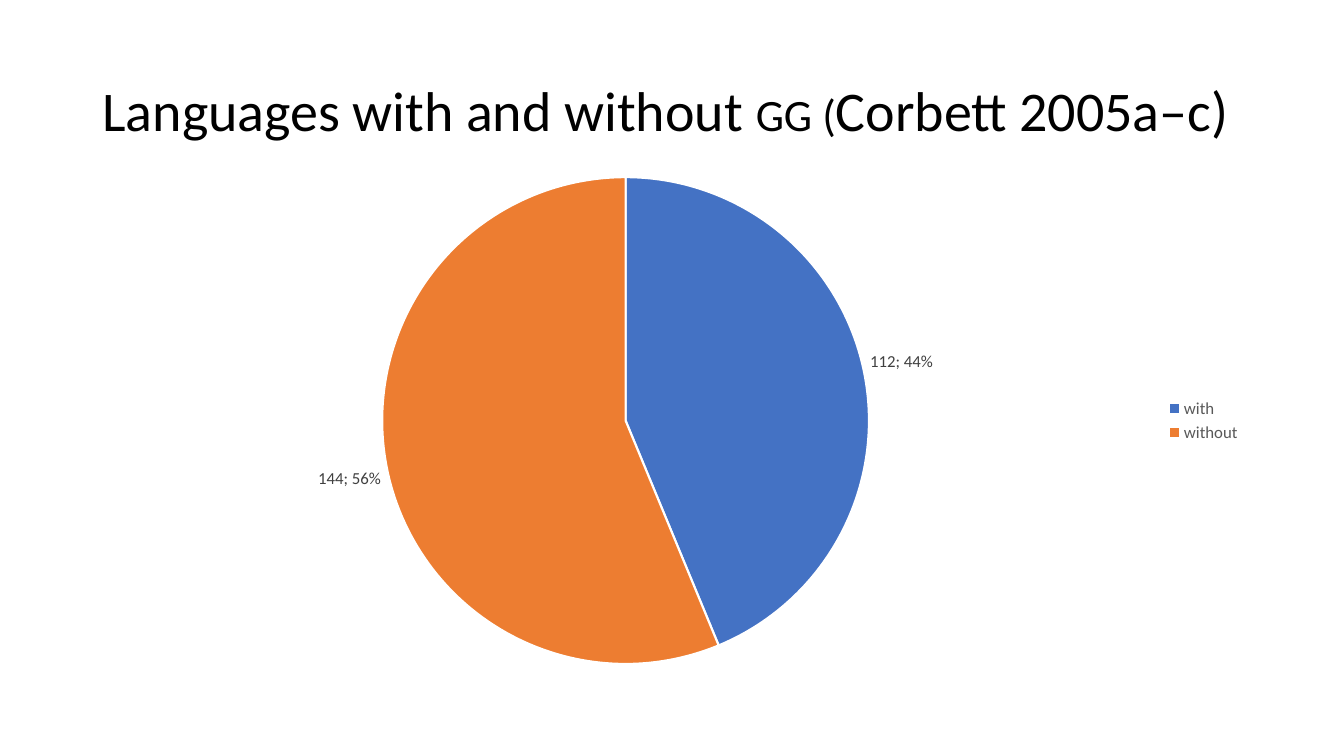
from dataclasses import dataclass

from lxml.etree import SubElement
from pptx import Presentation
from pptx.chart.data import CategoryChartData
from pptx.dml.color import RGBColor
from pptx.enum.chart import XL_CHART_TYPE, XL_LABEL_POSITION, XL_LEGEND_POSITION
from pptx.enum.text import MSO_ANCHOR
from pptx.oxml import parse_xml
from pptx.oxml.ns import nsdecls, qn
from pptx.util import Cm, Pt


@dataclass(frozen=True)
class Theme:
    font: str = "Calibri"
    title_size: int = 40
    chart_size: int = 12
    title_color: str = "000000"
    label_color: str = "404040"
    legend_color: str = "595959"
    slice_border: str = "FFFFFF"
    slice_colors: tuple = ("4472C4", "ED7D31")


THEME = Theme()
LEFT, WIDTH = Cm(2.33), Cm(29.21)
# Position and size of the pie, as fractions of the chart area
PIE_LAYOUT = {"x": 0.25, "y": 0.03, "w": 0.42, "h": 0.94}


def set_attributes(target, values):
    for name, value in values.items():
        setattr(target, name, value)


def style_font(font, size, color):
    set_attributes(font, {"name": THEME.font, "size": Pt(size), "bold": False})
    font.color.rgb = RGBColor.from_string(color)


def add_title(slide, parts):
    """Add the title from (text, is_small_caps) pairs."""
    shape = slide.shapes.add_textbox(LEFT, Cm(1.01), WIDTH, Cm(3.68))
    frame = shape.text_frame
    set_attributes(frame, {"word_wrap": True, "vertical_anchor": MSO_ANCHOR.MIDDLE})
    paragraph = frame.paragraphs[0]
    paragraph.line_spacing = 0.9
    for text, is_small_caps in parts:
        run = paragraph.add_run()
        run.text = text
        style_font(run.font, THEME.title_size, THEME.title_color)
        if is_small_caps:
            run.font._element.set("cap", "small")


def place_pie(chart):
    """Fix the inner plot area inside the chart."""
    plot_area = chart.element.xpath("//c:plotArea")[0]
    for layout in plot_area.findall(qn("c:layout")):
        plot_area.remove(layout)
    layout = parse_xml(f"<c:layout {nsdecls('c')}><c:manualLayout/></c:layout>")
    settings = {"layoutTarget": "inner", "xMode": "edge", "yMode": "edge", **PIE_LAYOUT}
    for name, value in settings.items():
        SubElement(layout[0], qn(f"c:{name}")).set("val", str(value))
    plot_area.insert(0, layout)


def style_slices(series):
    for index, color in enumerate(THEME.slice_colors):
        slice_format = series.points[index].format
        slice_format.fill.solid()
        slice_format.fill.fore_color.rgb = RGBColor.from_string(color)
        slice_format.line.color.rgb = RGBColor.from_string(THEME.slice_border)
        slice_format.line.width = Pt(1.5)


def style_labels(series):
    labels = series.data_labels
    set_attributes(labels, {
        "show_value": True,
        "show_percentage": True,
        "position": XL_LABEL_POSITION.OUTSIDE_END,
    })
    style_font(labels.font, THEME.chart_size, THEME.label_color)
    separator = parse_xml(f"<c:separator {nsdecls('c')}>; </c:separator>")
    labels._element.find(qn("c:showBubbleSize")).addnext(separator)


def add_pie(slide, counts):
    data = CategoryChartData()
    data.categories = list(counts)
    data.add_series("Series 1", list(counts.values()))
    chart = slide.shapes.add_chart(
        XL_CHART_TYPE.PIE, LEFT, Cm(4.06), WIDTH, Cm(13.08), data
    ).chart
    set_attributes(chart, {"has_title": False, "has_legend": True})
    style_font(chart.font, THEME.chart_size, THEME.title_color)

    # Legend
    set_attributes(chart.legend, {
        "position": XL_LEGEND_POSITION.RIGHT,
        "include_in_layout": False,
    })
    style_font(chart.legend.font, THEME.chart_size, THEME.legend_color)

    # Slices and their labels
    plot = chart.plots[0]
    plot.vary_by_categories = True
    style_slices(plot.series[0])
    style_labels(plot.series[0])
    place_pie(chart)


def main():
    presentation = Presentation()
    set_attributes(presentation, {"slide_width": Cm(33.87), "slide_height": Cm(19.05)})
    slide = presentation.slides.add_slide(presentation.slide_layouts[6])
    add_title(slide, [
        ("Languages with and without ", False),
        ("gg (", True),
        ("Corbett 2005a–c)", False),
    ])
    add_pie(slide, {"with": 112, "without": 144})
    presentation.save("out.pptx")


if __name__ == "__main__":
    main()
